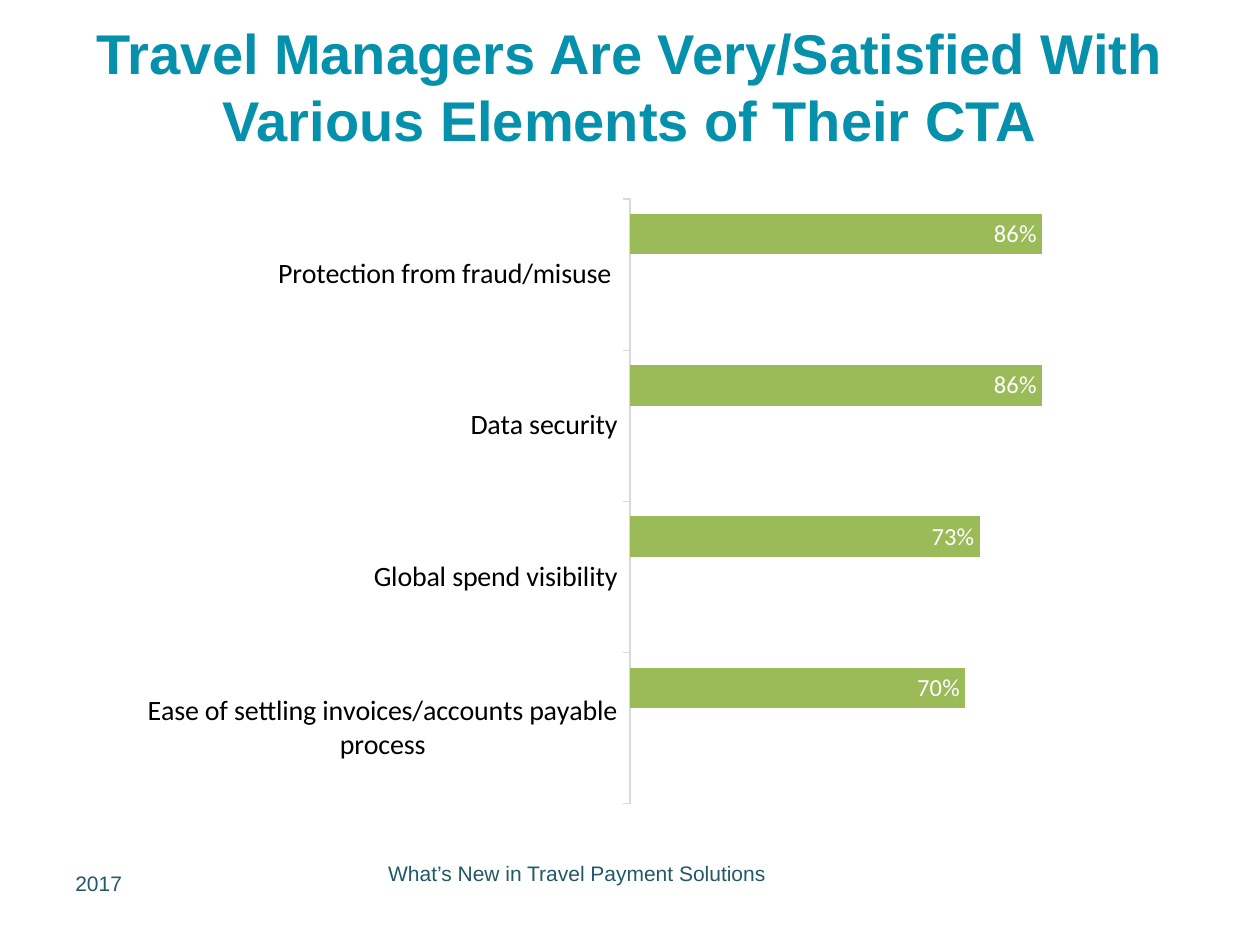
from lxml.etree import SubElement
from pptx import Presentation
from pptx.chart.data import CategoryChartData
from pptx.dml.color import RGBColor
from pptx.enum.chart import XL_CHART_TYPE, XL_LABEL_POSITION, XL_TICK_MARK
from pptx.enum.text import MSO_ANCHOR, MSO_AUTO_SIZE, PP_ALIGN
from pptx.oxml.ns import qn
from pptx.util import Inches, Pt


def color(value):
    return RGBColor.from_string(value)


class SlideBuilder:
    heading_font = "Arial"
    chart_font = "Calibri"
    title_color = "0590AC"
    footer_color = "215968"
    axis_color = "D9D9D9"

    def __init__(self, slide):
        self.slide = slide

    def style(self, font, name, size, value, bold=False):
        font.name = name
        font.size = Pt(size)
        font.bold = bold
        font.color.rgb = color(value)

    def fill_text(self, box, text, size, value, align, anchor, bold=False):
        frame = box.text_frame
        frame.word_wrap = True
        frame.auto_size = MSO_AUTO_SIZE.NONE
        frame.vertical_anchor = anchor
        para = frame.paragraphs[0]
        para.alignment = align
        span = para.add_run()
        span.text = text
        self.style(span.font, self.heading_font, size, value, bold)

    def title(self, text, left, top, width, height):
        box = self.slide.shapes.title
        box.left, box.top = Inches(left), Inches(top)
        box.width, box.height = Inches(width), Inches(height)
        self.fill_text(box, text, 32, self.title_color, PP_ALIGN.CENTER,
                       MSO_ANCHOR.MIDDLE, bold=True)

    def footer(self, text, left, top, width, height, align, anchor, bottom=0.05):
        box = self.slide.shapes.add_textbox(
            Inches(left), Inches(top), Inches(width), Inches(height))
        box.text_frame.margin_bottom = Inches(bottom)
        self.fill_text(box, text, 12, self.footer_color, align, anchor)

    def bar_chart(self, categories, series, left, top, width, height, plot_layout):
        data = CategoryChartData(number_format="0%")
        data.categories = categories
        for name, values, _, _ in series:
            data.add_series(name, values)
        chart = self.slide.shapes.add_chart(
            XL_CHART_TYPE.BAR_CLUSTERED, Inches(left), Inches(top),
            Inches(width), Inches(height), data).chart
        chart.has_legend = False
        chart.has_title = False
        self.style(chart.font, self.chart_font, 10, "000000")

        value_axis = chart.value_axis
        value_axis.minimum_scale = 0
        value_axis.maximum_scale = 1
        value_axis.has_major_gridlines = False
        value_axis.visible = False

        category_axis = chart.category_axis
        category_axis.major_tick_mark = XL_TICK_MARK.OUTSIDE
        category_axis.format.line.color.rgb = color(self.axis_color)
        category_axis.format.line.width = Pt(0.75)
        self.style(category_axis.tick_labels.font, self.chart_font, 16, "000000")

        plot = chart.plots[0]
        plot.gap_width = 75
        plot.overlap = 0
        plot.vary_by_categories = False
        for bars, (_, _, fill, label_color) in zip(plot.series, series):
            bars.format.fill.solid()
            bars.format.fill.fore_color.rgb = color(fill)
            labels = bars.data_labels
            labels.show_value = True
            labels.position = XL_LABEL_POSITION.INSIDE_END
            labels.number_format = "0%"
            labels.number_format_is_linked = False
            self.style(labels.font, self.chart_font, 14, label_color)
        self.place_plot(chart, plot_layout)

    def place_plot(self, chart, plot_layout):
        area = chart.element.find(".//" + qn("c:plotArea"))
        layout = area.find(qn("c:layout"))
        if layout is None:
            layout = area.makeelement(qn("c:layout"))
            area.insert(0, layout)
        manual = SubElement(layout, qn("c:manualLayout"))
        settings = {"layoutTarget": "inner", "xMode": "edge", "yMode": "edge"}
        settings.update(zip("xywh", plot_layout))
        for tag, value in settings.items():
            SubElement(manual, qn("c:" + tag)).set("val", str(value))


def main():
    deck = Presentation()
    deck.slide_width, deck.slide_height = Inches(10), Inches(7.5)
    page = SlideBuilder(deck.slides.add_slide(deck.slide_layouts[5]))

    page.footer("What’s New in Travel Payment Solutions", 1.63, 6.7, 5.9, 0.65,
                PP_ALIGN.CENTER, MSO_ANCHOR.MIDDLE, bottom=0.24)
    page.footer("2017", 0.5, 6.86, 2.56, 0.57, PP_ALIGN.LEFT, MSO_ANCHOR.TOP)
    page.title("Travel Managers Are Very/Satisfied With Various Elements of Their CTA",
               0.5, 0.17, 9, 1.02)

    categories = ["Ease of settling invoices/accounts payable process",
                  "Global spend visibility", "Data security",
                  "Protection from fraud/misuse "]
    empty = [None] * len(categories)
    series = [
        ("Series 1", empty, "1F497D", "FFFFFF"),
        ("Series 2", empty, "C0504D", "1F497D"),
        ("Series 3", [0.7, 0.73, 0.86, 0.86], "9BBB59", "FFFFFF"),
    ]
    page.bar_chart(categories, series, 1.04, 1.48, 7.92, 5, (0.5, 0.02, 0.48, 0.96))
    deck.save("out.pptx")


if __name__ == "__main__":
    main()
